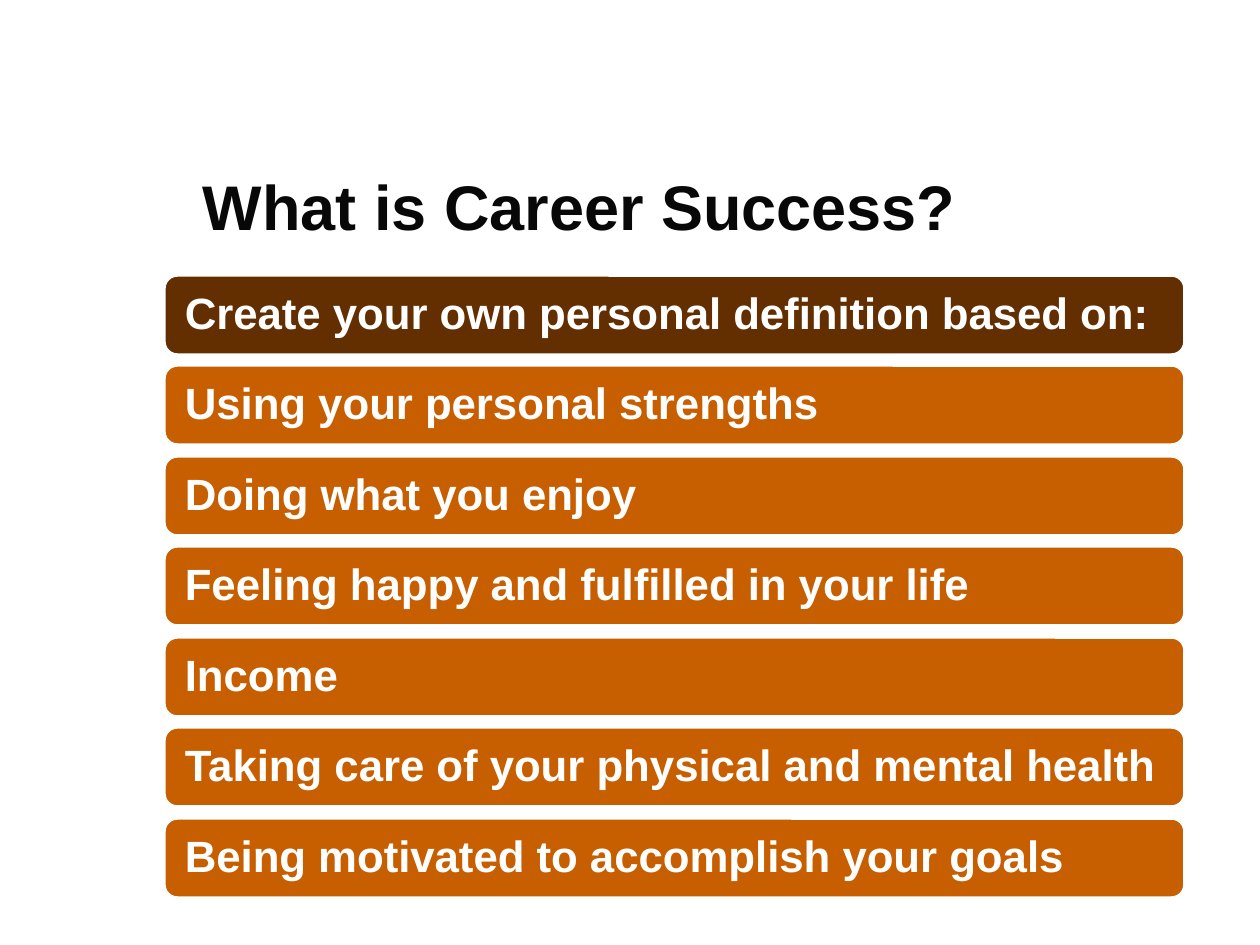
from dataclasses import dataclass

from pptx import Presentation
from pptx.dml.color import RGBColor
from pptx.enum.shapes import MSO_SHAPE
from pptx.enum.text import MSO_ANCHOR, PP_ALIGN
from pptx.slide import Slide
from pptx.text.text import TextFrame
from pptx.util import Emu, Pt

EMU_PER_PX = 914400 // 126
FONT_NAME = "Arial"
BAR_LEFT, BAR_WIDTH, BAR_HEIGHT = 164, 1021, 80
FIRST_BAR_TOP, LAST_BAR_TOP = 275, 818
BAR_PADDING = 17
HEADING_FILL, REASON_FILL = "642F00", "C75E00"
WHITE, TITLE_COLOR = "FFFFFF", "080808"


@dataclass
class Bar:
    text: str
    fill: str = REASON_FILL


BARS = [
    Bar("Create your own personal definition based on:", HEADING_FILL),
    Bar("Using your personal strengths"),
    Bar("Doing what you enjoy"),
    Bar("Feeling happy and fulfilled in your life"),
    Bar("Income"),
    Bar("Taking care of your physical and mental health"),
    Bar("Being motivated to accomplish your goals"),
]


def px(length: int) -> Emu:
    return Emu(length * EMU_PER_PX)


def color(hex_value: str) -> RGBColor:
    return RGBColor.from_string(hex_value)


def write_text(frame: TextFrame, text: str, size: int, hex_value: str, alignment: PP_ALIGN) -> None:
    frame.text = text
    frame.word_wrap = True
    frame.vertical_anchor = MSO_ANCHOR.MIDDLE
    paragraph = frame.paragraphs[0]
    paragraph.alignment = alignment
    font = paragraph.runs[0].font
    font.name = FONT_NAME
    font.size = Pt(size)
    font.bold = True
    font.color.rgb = color(hex_value)


def draw_title(slide: Slide, text: str) -> None:
    shape = slide.shapes.add_textbox(px(174), px(170), px(794), px(71))
    write_text(shape.text_frame, text, 36, TITLE_COLOR, PP_ALIGN.RIGHT)


def draw_bar(slide: Slide, bar: Bar, top: int) -> None:
    shape = slide.shapes.add_shape(
        MSO_SHAPE.ROUNDED_RECTANGLE, px(BAR_LEFT), px(top), px(BAR_WIDTH), px(BAR_HEIGHT)
    )
    shape.shadow.inherit = False
    shape.fill.solid()
    shape.fill.fore_color.rgb = color(bar.fill)
    shape.line.color.rgb = color(WHITE)
    shape.line.width = Pt(2)
    frame = shape.text_frame
    frame.margin_left = frame.margin_right = px(BAR_PADDING)
    write_text(frame, bar.text, 25, WHITE, PP_ALIGN.LEFT)
    frame.paragraphs[0].line_spacing = 0.9


def main() -> None:
    presentation = Presentation()
    presentation.slide_width = px(1260)
    presentation.slide_height = px(945)
    slide = presentation.slides.add_slide(presentation.slide_layouts[6])
    draw_title(slide, "What is Career Success?")
    for index, bar in enumerate(BARS):
        offset = (LAST_BAR_TOP - FIRST_BAR_TOP) * index // (len(BARS) - 1)
        draw_bar(slide, bar, FIRST_BAR_TOP + offset)
    presentation.save("out.pptx")


if __name__ == "__main__":
    main()
